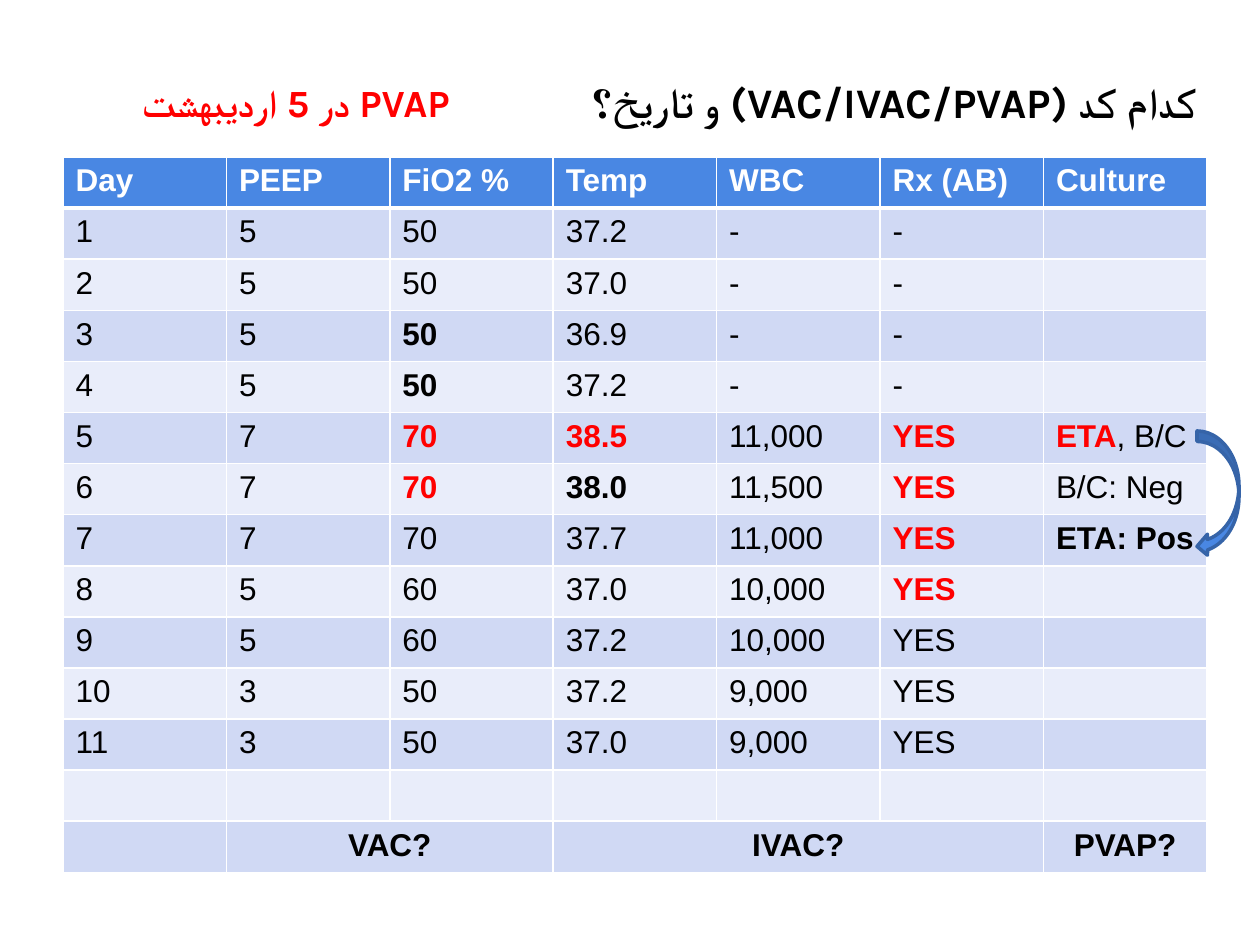
import pptx
import pptx.util
from lxml import etree
from pptx.dml.color import RGBColor
from pptx.enum.shapes import MSO_SHAPE
from pptx.enum.text import MSO_ANCHOR, PP_ALIGN
from pptx.oxml.ns import qn

EMU_PER_PX = 914400 / 126
BLACK = RGBColor(0x00, 0x00, 0x00)
WHITE = RGBColor(0xFF, 0xFF, 0xFF)
RED = RGBColor(0xFF, 0x00, 0x00)
BLUE = RGBColor(0x49, 0x87, 0xE3)
DARK_BLUE = RGBColor(0x36, 0x64, 0xA8)
BAND_DARK = RGBColor(0xD0, 0xD9, 0xF4)
BAND_LIGHT = RGBColor(0xE9, 0xED, 0xFA)

HEADER = ["Day", "PEEP", "FiO2 %", "Temp", "WBC", "Rx (AB)", "Culture"]
DAYS = [
    ["1", "5", "50", "37.2", "-", "-", ""],
    ["2", "5", "50", "37.0", "-", "-", ""],
    ["3", "5", "50", "36.9", "-", "-", ""],
    ["4", "5", "50", "37.2", "-", "-", ""],
    ["5", "7", "70", "38.5", "11,000", "YES", "ETA, B/C"],
    ["6", "7", "70", "38.0", "11,500", "YES", "B/C: Neg"],
    ["7", "7", "70", "37.7", "11,000", "YES", "ETA: Pos"],
    ["8", "5", "60", "37.0", "10,000", "YES", ""],
    ["9", "5", "60", "37.2", "10,000", "YES", ""],
    ["10", "3", "50", "37.2", "9,000", "YES", ""],
    ["11", "3", "50", "37.0", "9,000", "YES", ""],
]
QUESTIONS = ["", "VAC?", "", "IVAC?", "", "", "PVAP?"]
ROWS = [HEADER, *DAYS, [""] * len(HEADER), QUESTIONS]
LAST = len(ROWS) - 1

# (row, column) of the readings that stand out
RED_CELLS = {(5, 2), (6, 2), (5, 3), (5, 5), (6, 5), (7, 5), (8, 5)}
BOLD_CELLS = RED_CELLS | {(3, 2), (4, 2), (6, 3), (7, 6)}


def px(length):
    return pptx.util.Emu(round(length * EMU_PER_PX))


def set_borders(cell, widths):
    """Draw white cell borders; widths gives points for left, right, top, bottom."""
    properties = cell._tc.get_or_add_tcPr()
    for position, (side, width) in enumerate(zip(("lnL", "lnR", "lnT", "lnB"), widths)):
        line = etree.Element(qn(f"a:{side}"), w=str(pptx.util.Pt(width)))
        fill = etree.SubElement(line, qn("a:solidFill"))
        etree.SubElement(fill, qn("a:srgbClr"), val=str(WHITE))
        properties.insert(position, line)


presentation = pptx.Presentation()
presentation.slide_width = px(1260)
presentation.slide_height = px(945)
slide = presentation.slides.add_slide(presentation.slide_layouts[6])

# Patient table
table = slide.shapes.add_table(
    len(ROWS), len(HEADER), px(63), px(157), px(1144), px(716)
).table
table.first_row = False
table.horz_banding = False
for table_row in table.rows:
    table_row.height = px(716) // len(ROWS)
for table_column in table.columns:
    table_column.width = px(1144) // len(HEADER)

for row, values in enumerate(ROWS):
    for column, value in enumerate(values):
        cell = table.cell(row, column)
        cell.fill.solid()
        if row == 0:
            cell.fill.fore_color.rgb = BLUE
        else:
            cell.fill.fore_color.rgb = BAND_DARK if row % 2 else BAND_LIGHT
        set_borders(cell, (1, 1, 3 if row == 1 else 1, 3 if row == 0 else 1))

        reading = cell.text_frame.paragraphs[0]
        if row == LAST:
            reading.alignment = PP_ALIGN.CENTER
        reading.font.name = "Arial"
        reading.font.size = pptx.util.Pt(18)
        if value == "ETA, B/C":
            for part, bold, color in (("ETA", True, RED), (", B/C", False, BLACK)):
                run = reading.add_run()
                run.text = part
                run.font.bold = bold
                run.font.color.rgb = color
            continue
        reading.font.bold = row in (0, LAST) or (row, column) in BOLD_CELLS
        if row == 0:
            reading.font.color.rgb = WHITE
        else:
            reading.font.color.rgb = RED if (row, column) in RED_CELLS else BLACK
        if value:
            reading.add_run().text = value

for first, last in ((1, 2), (3, 5)):
    table.cell(LAST, first).merge(table.cell(LAST, last))

# Question and its answer, both right to left
for wording, size, color, (left, top, width, height) in (
    ("کدام کد (VAC/IVAC/PVAP) و تاریخ؟", 24, BLACK, (53, 63, 1155, 78)),
    ("PVAP در 5 اردیبهشت", 22, RED, (42, 73, 420, 59)),
):
    frame = slide.shapes.add_textbox(px(left), px(top), px(width), px(height)).text_frame
    frame.word_wrap = True
    frame.vertical_anchor = MSO_ANCHOR.MIDDLE
    heading = frame.paragraphs[0]
    heading.add_run().text = wording
    heading.alignment = PP_ALIGN.RIGHT
    heading.font.name = "Karla"
    heading.font.size = pptx.util.Pt(size)
    heading.font.bold = True
    heading.font.color.rgb = color
    settings = heading._p.get_or_add_pPr()
    settings.set("rtl", "1")
    etree.SubElement(settings.find(qn("a:defRPr")), qn("a:cs"), typeface="Karla")

# Arrow from the culture taken to its result
culture_arrow = slide.shapes.add_shape(
    MSO_SHAPE.CURVED_LEFT_ARROW, px(1197), px(431), px(42), px(126)
)
culture_arrow.shadow.inherit = False
culture_arrow.fill.solid()
culture_arrow.fill.fore_color.rgb = BLUE
culture_arrow.line.color.rgb = DARK_BLUE
culture_arrow.line.width = pptx.util.Pt(2)

presentation.save("out.pptx")
